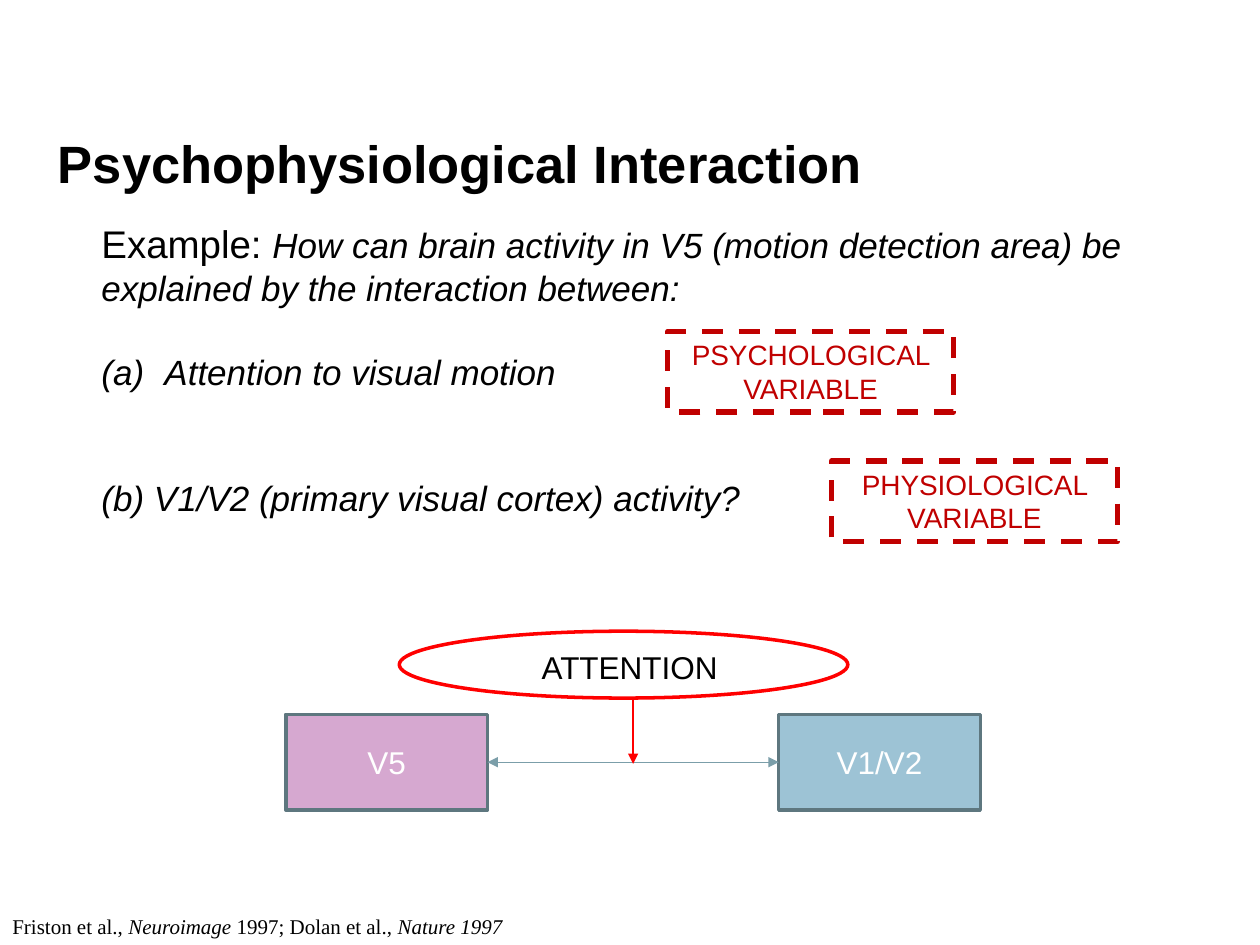
from lxml.etree import SubElement
from pptx import Presentation
from pptx.dml.color import RGBColor
from pptx.enum.dml import MSO_LINE
from pptx.enum.shapes import MSO_CONNECTOR, MSO_SHAPE
from pptx.enum.text import MSO_ANCHOR, PP_ALIGN
from pptx.oxml.ns import qn
from pptx.util import Pt

COLORS = {
    "text": "000000",
    "light": "FFFFFF",
    "label": "C00000",
    "attention": "FF0000",
    "v5": "AE53A2",
    "v1v2": "3D89AD",
    "border": "5E777F",
    "link": "7B9EA9",
}


def rgb(name):
    return RGBColor.from_string(COLORS[name])


def style(font, size, color="text", name="Arial", bold=False, italic=False):
    font.name, font.size = name, Pt(size)
    font.bold, font.italic = bold, italic
    font.color.rgb = rgb(color)


def add_span(para, text, size, **look):
    span = para.add_run()
    span.text = text
    style(span.font, size, **look)


def add_text_frame(page, box, wrap=True):
    frame = page.shapes.add_textbox(*map(Pt, box)).text_frame
    frame.word_wrap = wrap
    return frame


def add_outlined(page, kind, box, line, width):
    shape = page.shapes.add_shape(kind, *map(Pt, box))
    shape.shadow.inherit = False
    shape.fill.background()
    shape.line.color.rgb = rgb(line)
    shape.line.width = Pt(width)
    return shape


def set_label(shape, text, size, color, anchor):
    frame = shape.text_frame
    frame.word_wrap = True
    frame.vertical_anchor = anchor
    frame.text = text
    para = frame.paragraphs[0]
    para.alignment = PP_ALIGN.CENTER
    style(para.runs[0].font, size, color)


def add_arrow(page, start, end, color, ends):
    arrow = page.shapes.add_connector(MSO_CONNECTOR.STRAIGHT, *map(Pt, start + end))
    arrow.line.color.rgb = rgb(color)
    arrow.line.width = Pt(0.75)
    outline = arrow.line._get_or_add_ln()
    for tag in ends:
        SubElement(outline, qn(tag), type="triangle")
    SubElement(arrow._element.spPr, qn("a:effectLst"))
    return arrow


def place_title(page, box):
    title = page.shapes.title
    title.left, title.top, title.width, title.height = map(Pt, box)
    frame = title.text_frame
    frame.text = "Psychophysiological Interaction"
    frame.vertical_anchor = MSO_ANCHOR.TOP
    para = frame.paragraphs[0]
    para.alignment = PP_ALIGN.LEFT
    style(para.runs[0].font, 30, bold=True)


def indent(para, margin, first_line=0):
    properties = para._p.get_or_add_pPr()
    properties.set("marL", str(Pt(margin)))
    properties.set("indent", str(Pt(first_line)))
    return properties


def place_question(page, box):
    frame = add_text_frame(page, box)
    example = frame.paragraphs[0]
    factor_a, factor_b = frame.add_paragraph(), frame.add_paragraph()

    indent(example, 31.5)
    add_span(example, "Example: ", 22)
    add_span(example, "How can brain activity in V5 (motion detection area) be "
                      "explained by the interaction between:", 20, italic=True)

    numbered = indent(factor_a, 67.5, -36)
    SubElement(numbered, qn("a:buFont"), typeface="+mj-lt")
    SubElement(numbered, qn("a:buAutoNum"), type="alphaLcParenBoth")
    add_span(factor_a, "Attention to visual motion", 20, italic=True)
    factor_a.space_before = Pt(24)

    indent(factor_b, 31.5)
    add_span(factor_b, "(b) V1/V2 (primary visual cortex) activity?", 20, italic=True)
    factor_b.space_before = Pt(48)


def place_variable(page, box, text):
    shape = add_outlined(page, MSO_SHAPE.RECTANGLE, box, "label", 3)
    shape.line.dash_style = MSO_LINE.DASH
    set_label(shape, text, 16, "label", MSO_ANCHOR.TOP)


def add_region(page, box, text, color):
    shape = add_outlined(page, MSO_SHAPE.RECTANGLE, box, "border", 2)
    shape.fill.solid()
    shape.fill.fore_color.rgb = rgb(color)
    tint = shape._element.spPr.find(qn("a:solidFill"))[0]
    SubElement(tint, qn("a:alpha"), val="50000")
    set_label(shape, text, 18, "light", MSO_ANCHOR.MIDDLE)
    return shape


def place_diagram(page, box):
    left, top, width, height = box
    region_width, region_height = 115.2, 54.7
    region_top = top + height - region_height
    right = left + width - region_width

    # Attention ellipse
    ellipse_height = 38.2
    add_outlined(page, MSO_SHAPE.OVAL, (left + 64.8, top, 256.3, ellipse_height),
                 "attention", 2)

    # Brain regions and the link between them
    v5 = add_region(page, (left, region_top, region_width, region_height), "V5", "v5")
    v1v2 = add_region(page, (right, region_top, region_width, region_height),
                      "V1/V2", "v1v2")
    middle = region_top + region_height / 2
    link = add_arrow(page, (left + region_width, middle), (right, middle),
                     "link", ("a:headEnd", "a:tailEnd"))
    link.begin_connect(v5, 3)
    link.end_connect(v1v2, 1)

    # Attention acting on the link
    arrow_x = left + width / 2
    add_arrow(page, (arrow_x, top + ellipse_height), (arrow_x, middle + 1),
              "attention", ("a:tailEnd",))
    frame = add_text_frame(page, (left + 139, top + 5.8, 115.9, 28.8), wrap=False)
    add_span(frame.paragraphs[0], "ATTENTION", 18)


def place_citation(page, box):
    para = add_text_frame(page, box).paragraphs[0]
    for text, italic in (("Friston et al., ", False), ("Neuroimage ", True),
                         ("1997; Dolan et al., ", False), ("Nature 1997", True)):
        add_span(para, text, 12, name="Times New Roman", italic=italic)


def main():
    deck = Presentation()
    deck.slide_width, deck.slide_height = Pt(720), Pt(540)
    page = deck.slides.add_slide(deck.slide_layouts[5])
    place_title(page, (25.9, 71.3, 668.2, 102.2))
    place_citation(page, (0, 518.4, 324, 21.6))
    place_question(page, (19.4, 122.4, 675.4, 200.9))
    place_variable(page, (381.6, 189.4, 163.4, 46.1), "PSYCHOLOGICAL VARIABLE")
    place_variable(page, (475.2, 263.5, 163.4, 46.1), "PHYSIOLOGICAL VARIABLE")
    place_diagram(page, (163.4, 360.7, 396.8, 102.2))
    deck.save("out.pptx")


if __name__ == "__main__":
    main()
